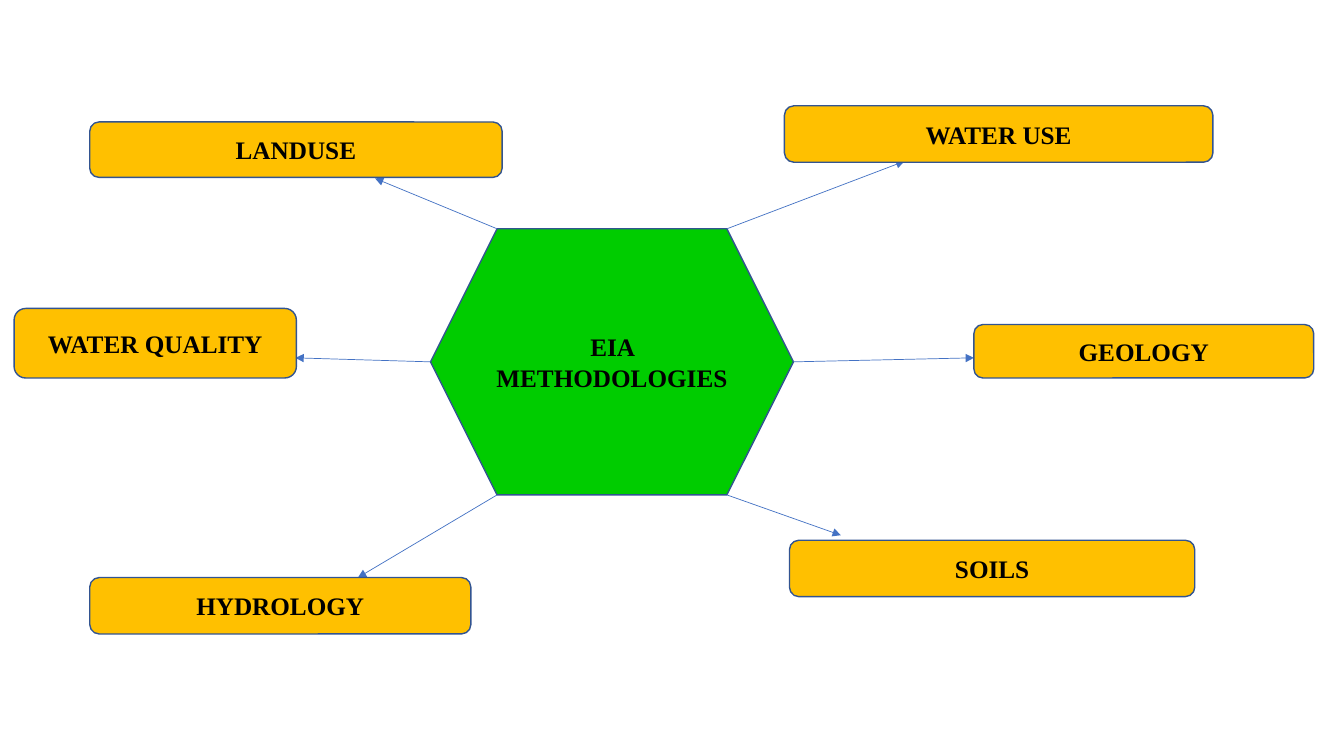
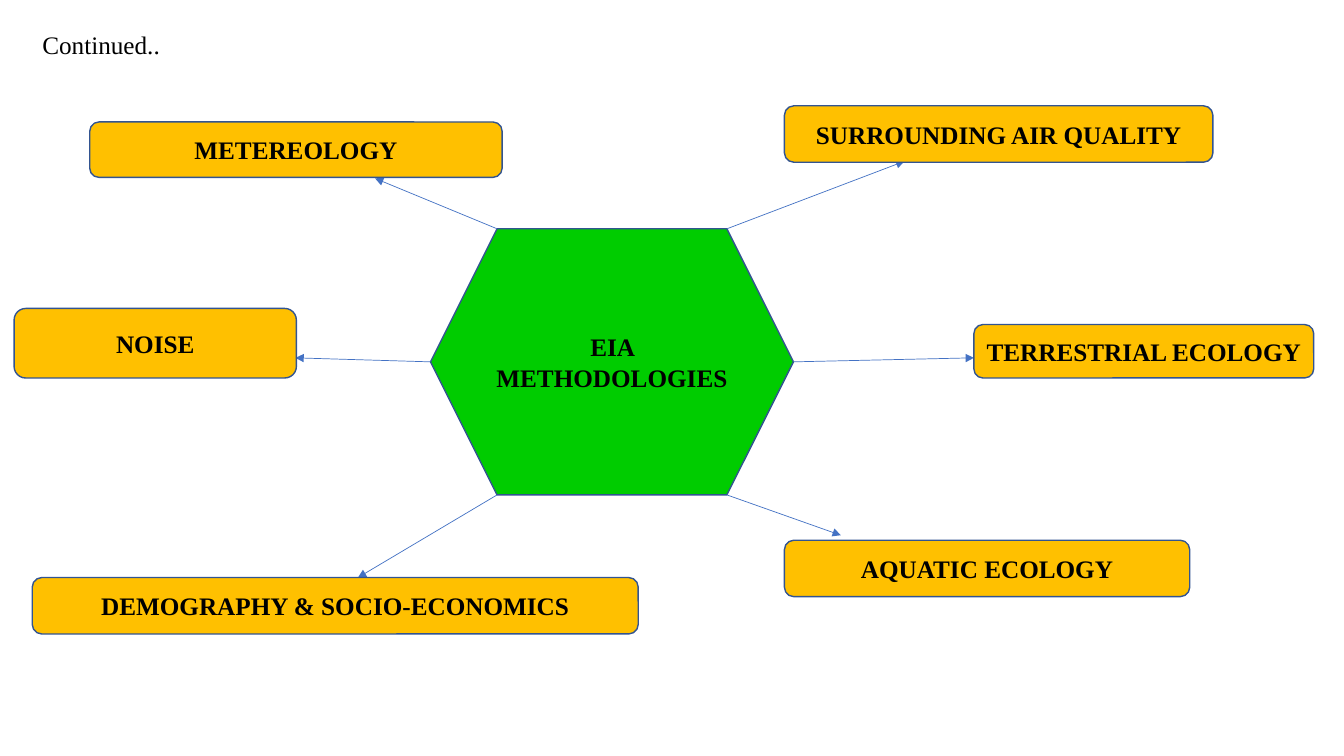
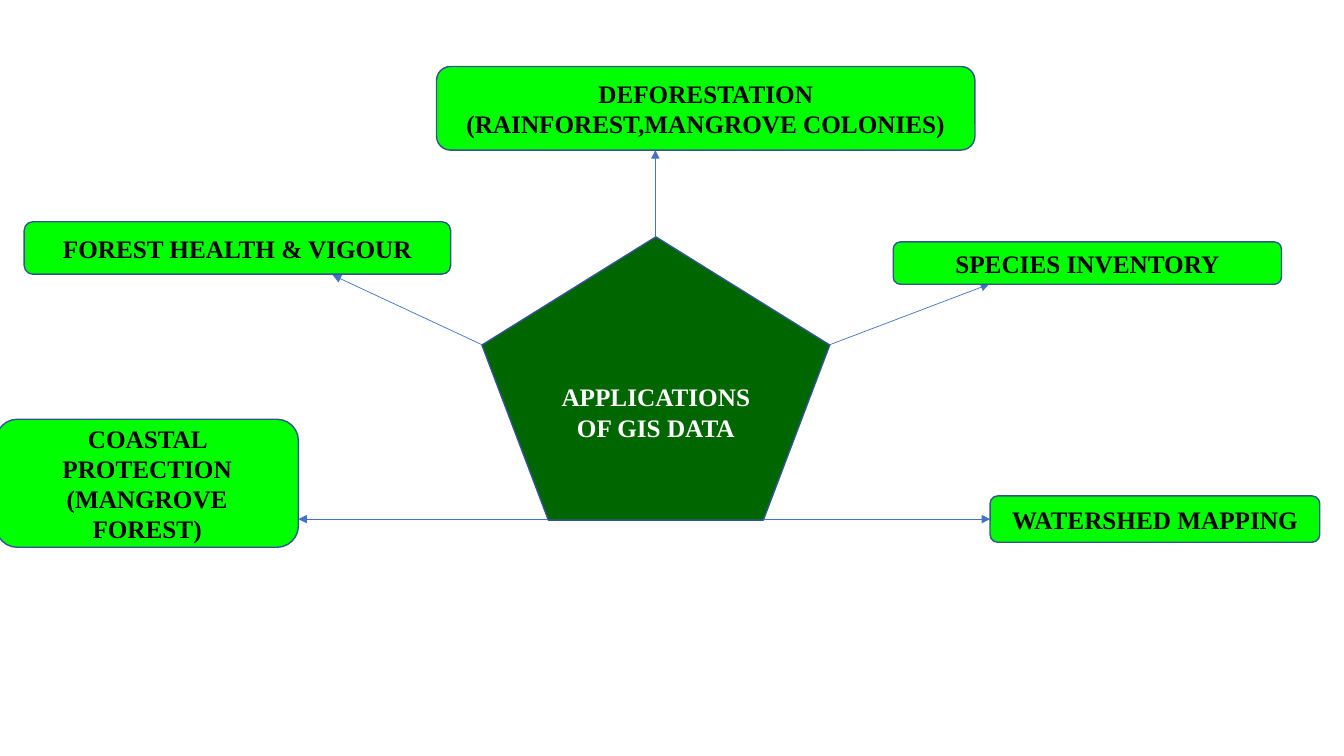
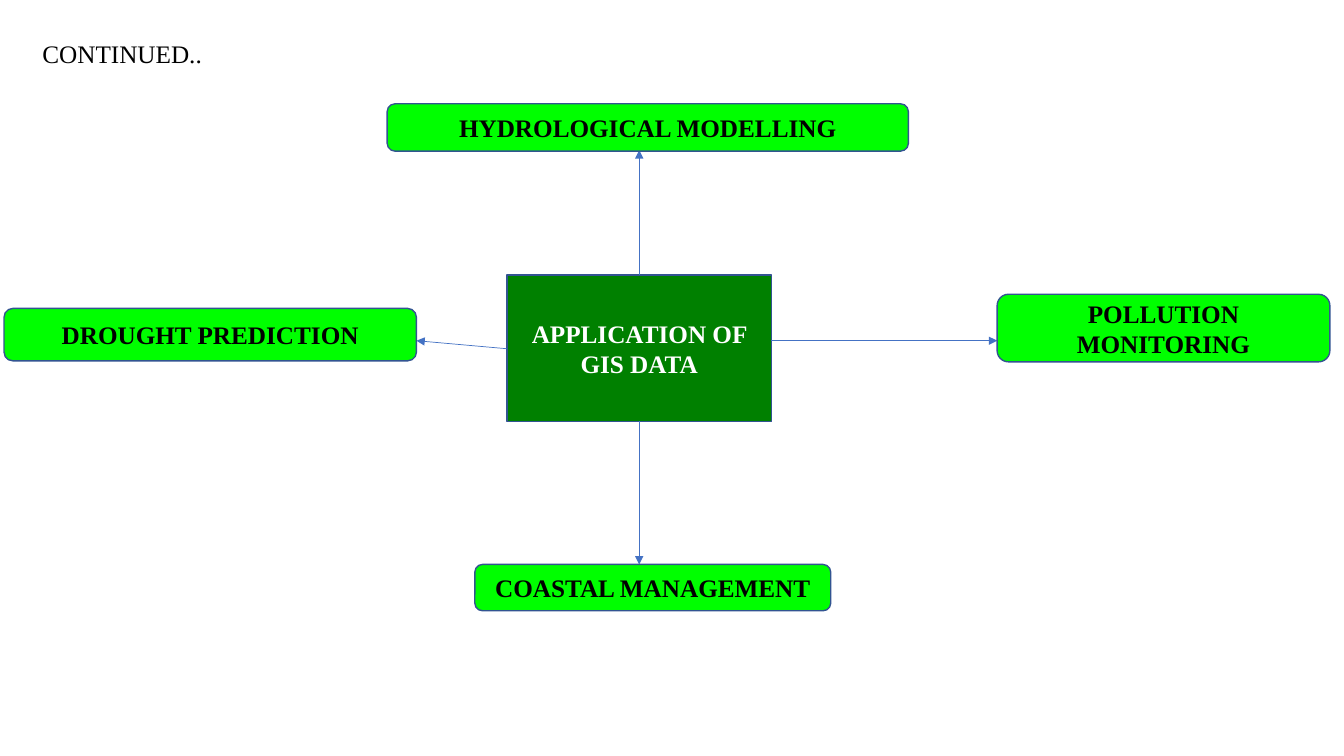
from pptx import Presentation
from pptx.dml.color import RGBColor
from pptx.enum.shapes import MSO_CONNECTOR, MSO_SHAPE
from pptx.enum.text import MSO_ANCHOR, MSO_AUTO_SIZE, PP_ALIGN
from pptx.oxml.ns import qn
from pptx.util import Inches, Pt
from lxml.etree import SubElement

BLACK, WHITE = "000000", "FFFFFF"
AMBER, LIME = "FFC000", "00FF00"
HUB_GREEN, FOREST, GREEN = "00CC00", "006600", "008000"
OUTLINE, ARROW = "325491", "4472C4"

EIA_HUB = (4.27, 2.27, 3.6, 2.64)
EIA_ARROWS = [
    ((4.93, 2.27), (3.72, 1.77)),
    ((7.21, 2.27), (8.97, 1.6)),
    ((4.27, 3.59), (2.93, 3.55)),
    ((7.87, 3.59), (9.66, 3.55)),
    ((4.93, 4.91), (3.55, 5.73)),
    ((7.21, 4.91), (8.34, 5.31)),
]
EIA_UPPER_BOXES = [
    (0.89, 1.21, 4.09, 0.55),
    (7.78, 1.05, 4.25, 0.56),
    (0.14, 3.06, 2.8, 0.69),
    (9.66, 3.22, 3.37, 0.53),
]


def rgb(color):
    """Turn a hex string into a colour."""
    return RGBColor.from_string(color)


class Deck:
    """Holds the presentation, its style and the current slide."""

    font = "Times New Roman"
    size = Pt(18)

    def __init__(self):
        """Start an empty widescreen presentation."""
        self.prs = Presentation()
        self.prs.slide_width, self.prs.slide_height = Inches(13.33), Inches(7.5)

    def slide(self, title=None, box=None):
        """Add a slide, with a title when one is given."""
        layout = self.prs.slide_layouts.get_by_name("Title Only" if title else "Blank")
        self.s = self.prs.slides.add_slide(layout)
        if title:
            sp = self.s.shapes.title
            sp.left, sp.top, sp.width, sp.height = map(Inches, box)
            self.text(sp, title, BLACK, False, PP_ALIGN.LEFT, MSO_ANCHOR.TOP)

    def text(self, sp, text, color, bold=True, align=PP_ALIGN.CENTER, anchor=MSO_ANCHOR.MIDDLE):
        """Write one formatted paragraph into a shape."""
        tf = sp.text_frame
        tf.text = text
        tf.word_wrap = True
        tf.auto_size = MSO_AUTO_SIZE.NONE
        tf.vertical_anchor = anchor
        p = tf.paragraphs[0]
        p.alignment = align
        p.font.name, p.font.size, p.font.bold = self.font, self.size, bold
        p.font.color.rgb = rgb(color)

    def shape(self, kind, box, text, fill, color=BLACK):
        """Add a filled, outlined shape with centred text."""
        sp = self.s.shapes.add_shape(kind, *map(Inches, box))
        sp.shadow.inherit = False
        sp.fill.solid()
        sp.fill.fore_color.rgb = rgb(fill)
        sp.line.color.rgb = rgb(OUTLINE)
        sp.line.width = Pt(1)
        self.text(sp, text, color)

    def arrow(self, start, end):
        """Add a thin straight arrow."""
        cxn = self.s.shapes.add_connector(MSO_CONNECTOR.STRAIGHT, *map(Inches, start + end))
        cxn.line.color.rgb = rgb(ARROW)
        cxn.line.width = Pt(0.5)
        SubElement(cxn.line._get_or_add_ln(), qn("a:tailEnd"), type="triangle")
        SubElement(cxn._element.spPr, qn("a:effectLst"))

    def spokes(self, arrows, labels, boxes, fill):
        """Add the arrows of a hub and the rounded labels around it."""
        for start, end in arrows:
            self.arrow(start, end)
        for label, box in zip(labels, boxes, strict=True):
            self.shape(MSO_SHAPE.ROUNDED_RECTANGLE, box, label, fill)

    def eia(self, labels, lower_boxes):
        """Add the hexagon diagram of EIA methodologies."""
        self.shape(MSO_SHAPE.HEXAGON, EIA_HUB, "EIA METHODOLOGIES", HUB_GREEN)
        self.spokes(EIA_ARROWS, labels, EIA_UPPER_BOXES + lower_boxes, AMBER)


def main():
    """Build and save the four slides."""
    deck = Deck()

    deck.slide()
    deck.eia(
        ["LANDUSE", "WATER USE", "WATER QUALITY", "GEOLOGY", "HYDROLOGY", "SOILS"],
        [(0.89, 5.73, 3.78, 0.56), (7.83, 5.36, 4.02, 0.56)],
    )

    deck.slide("Continued..", (0.32, 0.24, 5.42, 0.4))
    deck.eia(
        ["METEREOLOGY", "SURROUNDING AIR QUALITY", "NOISE", "TERRESTRIAL ECOLOGY",
         "DEMOGRAPHY & SOCIO-ECONOMICS", "AQUATIC ECOLOGY"],
        [(0.32, 5.73, 6.01, 0.56), (7.78, 5.36, 4.02, 0.56)],
    )

    deck.slide()
    deck.shape(MSO_SHAPE.REGULAR_PENTAGON, (4.78, 2.35, 3.45, 2.81),
               "APPLICATIONS OF GIS DATA", FOREST, WHITE)
    deck.spokes(
        [((6.5, 2.35), (6.5, 1.49)), ((8.23, 3.42), (9.81, 2.82)),
         ((7.57, 5.15), (9.82, 5.15)), ((5.44, 5.15), (2.96, 5.15)),
         ((4.78, 3.42), (3.3, 2.73))],
        ["DEFORESTATION (RAINFOREST,MANGROVE COLONIES)", "SPECIES INVENTORY",
         "WATERSHED MAPPING", "COASTAL PROTECTION (MANGROVE FOREST)",
         "FOREST HEALTH & VIGOUR"],
        [(4.33, 0.66, 5.34, 0.83), (8.86, 2.4, 3.85, 0.42), (9.82, 4.92, 3.27, 0.46),
         (-0.04, 4.16, 3, 1.27), (0.24, 2.2, 4.23, 0.52)],
        LIME,
    )

    deck.slide("CONTINUED..", (0.32, 0.33, 3.94, 0.4))
    deck.shape(MSO_SHAPE.RECTANGLE, (5.03, 2.73, 2.62, 1.45),
               "APPLICATION OF GIS DATA", GREEN, WHITE)
    deck.spokes(
        [((6.34, 2.73), (6.34, 1.49)), ((7.65, 3.38), (9.89, 3.38)),
         ((6.34, 4.18), (6.34, 5.6)), ((5.03, 3.46), (4.13, 3.38))],
        ["HYDROLOGICAL MODELLING", "POLLUTION MONITORING", "COASTAL MANAGEMENT",
         "DROUGHT PREDICTION"],
        [(3.84, 1.03, 5.17, 0.47), (9.89, 2.92, 3.3, 0.67), (4.71, 5.6, 3.53, 0.46),
         (0.04, 3.06, 4.09, 0.52)],
        LIME,
    )

    deck.prs.save("out.pptx")


if __name__ == "__main__":
    main()
